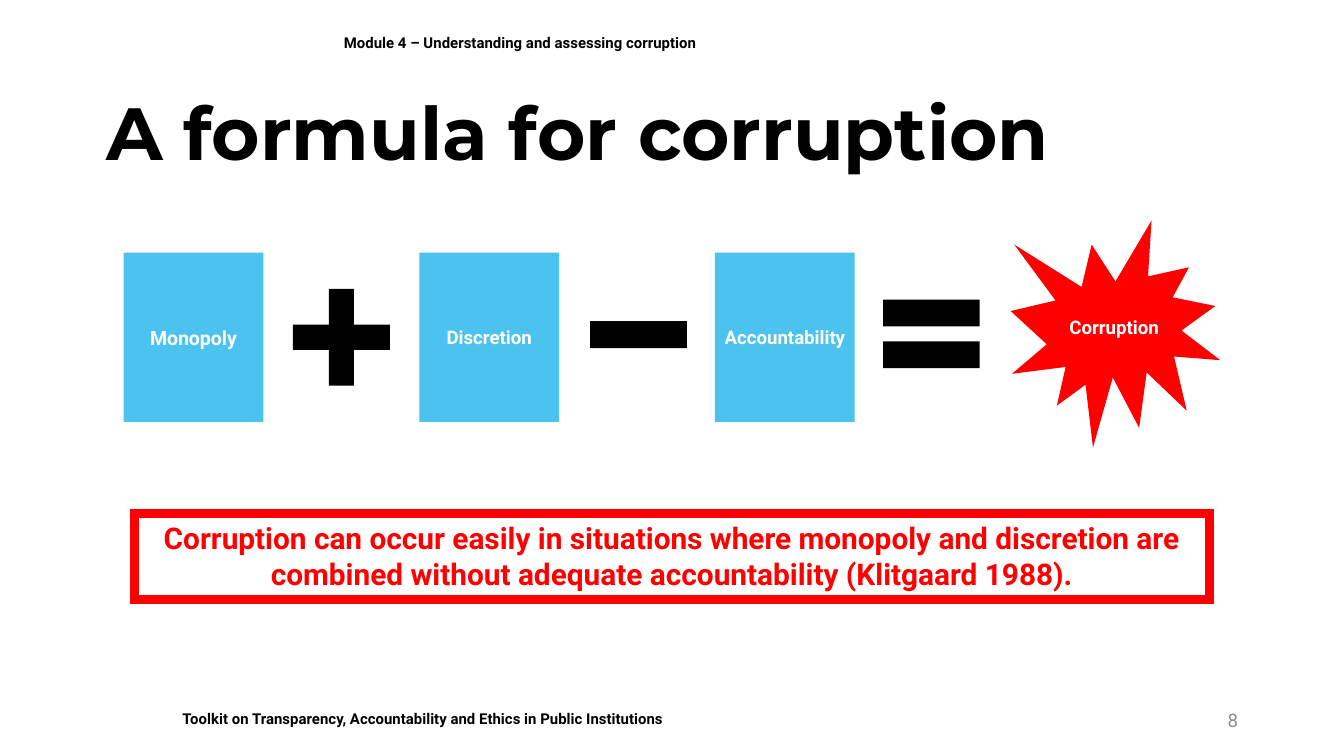
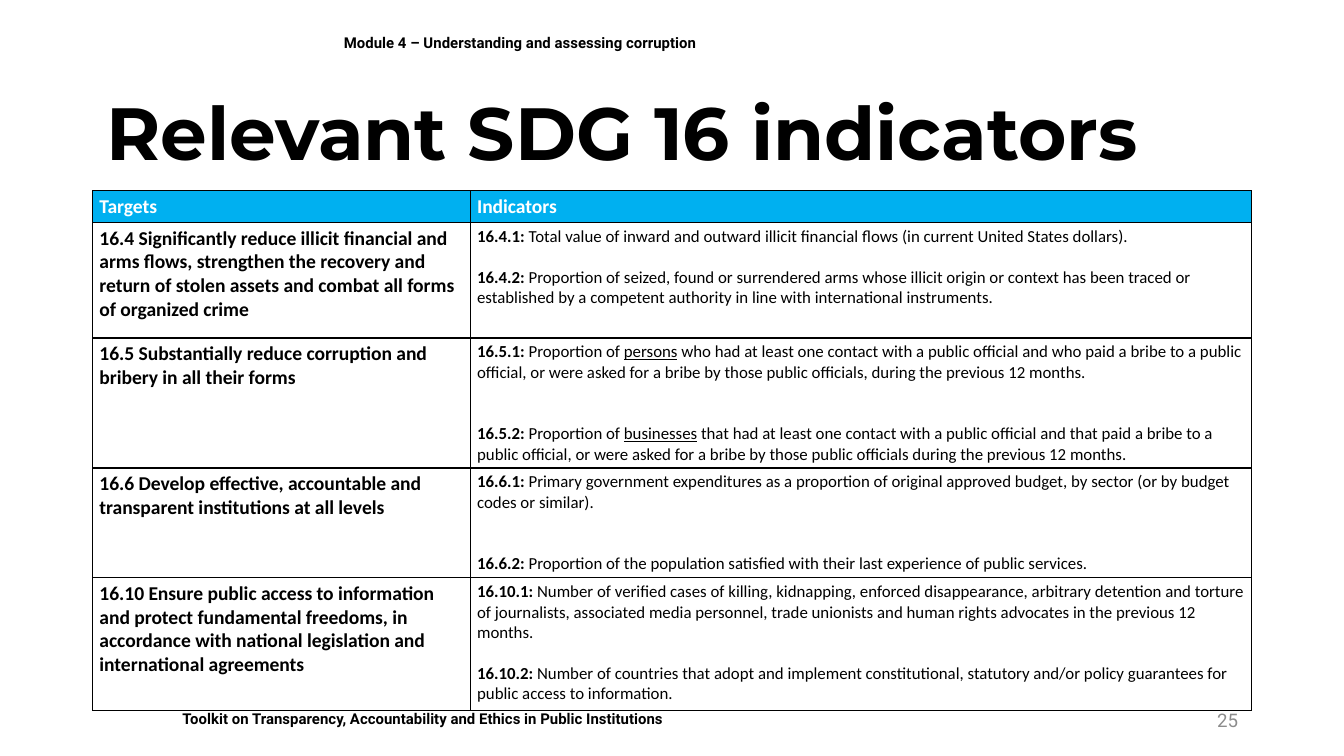
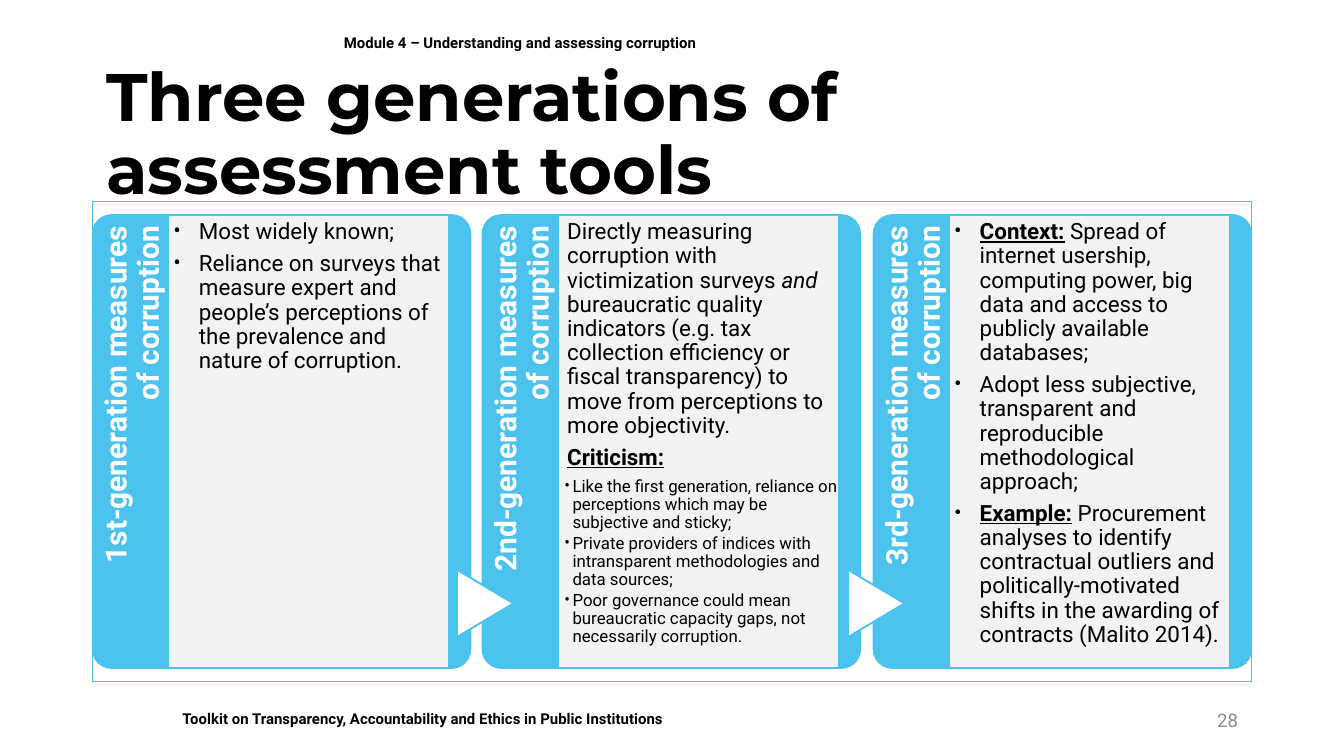
import lxml.etree
import pptx
import pptx.dml.color
import pptx.enum.shapes
import pptx.enum.text
import pptx.oxml.ns
import pptx.util

PX = 9144  # 100 px to the inch
BLUE, RED, BLACK, WHITE = "4CC2EF", "FF0000", "000000", "FFFFFF"
HEADER_BLUE, GREY, PANEL_GREY = "00B0F0", "8C8C8C", "F2F2F2"

rgb = pptx.dml.color.RGBColor.from_string
Pt = pptx.util.Pt
qn = pptx.oxml.ns.qn
SHAPE = pptx.enum.shapes.MSO_SHAPE
ALIGN = pptx.enum.text.PP_ALIGN
ANCHOR = pptx.enum.text.MSO_ANCHOR


def add_box(slide, preset, place, fill=None, line=None, weight=1,
            anchor=ANCHOR.TOP, insets=(10, 5, 10, 5)):
    """Add a preset shape, or a text box when preset is None."""
    place = [length * PX for length in place]
    if preset is None:
        box = slide.shapes.add_textbox(*place)
    else:
        box = slide.shapes.add_shape(preset, *place)
    box.shadow.inherit = False
    if fill:
        box.fill.solid()
        box.fill.fore_color.rgb = rgb(fill)
    else:
        box.fill.background()
    if line:
        box.line.color.rgb = rgb(line)
        box.line.width = Pt(weight)
        outline = box._element.spPr.find(qn("a:ln"))
        lxml.etree.SubElement(outline, qn("a:miter"), lim="800000")
    else:
        box.line.fill.background()
    frame = box.text_frame
    frame.word_wrap = True
    frame.vertical_anchor = anchor
    (frame.margin_left, frame.margin_top,
     frame.margin_right, frame.margin_bottom) = [inset * PX for inset in insets]
    return box


def write(paragraph, text, size, colour=BLACK, bold=False, font="Roboto", align=ALIGN.LEFT):
    """Write a string, or a list of (text, style) runs with style letters b, i, u."""
    paragraph.alignment = align
    paragraph.font.name = font
    paragraph.font.size = Pt(size)
    paragraph.font.bold = bold
    paragraph.font.color.rgb = rgb(colour)
    for words, style in [(text, "")] if isinstance(text, str) else text:
        run = paragraph.add_run()
        run.text = words
        if "b" in style:
            run.font.bold = True
        if "i" in style:
            run.font.italic = True
        if "u" in style:
            run.font.underline = True


deck = pptx.Presentation()
deck.slide_width = 1000 * PX
deck.slide_height = deck.slide_width * 9 // 16

# Shared parts: footer, module line, page number, title
slides = []
for title_text, title_size, page in [
    ("A formula for corruption", 39.6, "8"),
    ("Relevant SDG 16 indicators", 39.6, "25"),
    ("Three generations of assessment tools", 36, "28"),
]:
    slide = deck.slides.add_slide(deck.slide_layouts[5])
    slides.append(slide)
    footer = add_box(slide, SHAPE.RECTANGLE, (126, 523, 717, 24), WHITE)
    write(footer.text_frame.paragraphs[0],
          "Toolkit on Transparency, Accountability and Ethics in Public Institutions", 8, bold=True)
    module = add_box(slide, None, (246, 10, 685, 44), anchor=ANCHOR.MIDDLE)
    write(module.text_frame.paragraphs[0],
          "Module 4 – Understanding and assessing corruption", 8, bold=True)
    number = add_box(slide, None, (706, 521, 225, 30), anchor=ANCHOR.MIDDLE)
    write(number.text_frame.paragraphs[0], page, 10, GREY, align=ALIGN.RIGHT)

    title = slide.shapes.title
    title.left, title.top, title.width, title.height = 69 * PX, 64 * PX, 862 * PX, 75 * PX
    title.text_frame.auto_size = pptx.enum.text.MSO_AUTO_SIZE.NONE
    title.text_frame.vertical_anchor = ANCHOR.MIDDLE
    heading = title.text_frame.paragraphs[0]
    heading.line_spacing = 0.9
    write(heading, title_text, title_size, bold=True, font="Montserrat")

formula_slide, indicator_slide, generation_slide = slides

# Formula: operators
plus = add_box(formula_slide, SHAPE.CROSS, (218, 215, 72, 72), BLACK)
plus.adjustments[0] = 0.37
for bar_left, bar_top in [(439, 239), (657, 223), (657, 254)]:
    add_box(formula_slide, SHAPE.RECTANGLE, (bar_left, bar_top, 72, 20), BLACK)

# Formula: terms and result
terms = [
    (SHAPE.RECTANGLE, (92 + 220 * i, 188, 104, 126), BLUE, word, size)
    for i, (word, size) in enumerate([("Monopoly", 10.5), ("Discretion", 10), ("Accountability", 10)])
]
terms.append((SHAPE.EXPLOSION1, (752, 164, 156, 169), RED, "Corruption", 10))
for preset, place, colour, word, size in terms:
    term = add_box(formula_slide, preset, place, colour, anchor=ANCHOR.MIDDLE, insets=(4, 4, 4, 4))
    write(term.text_frame.paragraphs[0], word, size, WHITE, bold=True, align=ALIGN.CENTER)

# Formula: conclusion
conclusion = add_box(formula_slide, SHAPE.RECTANGLE, (100, 382, 800, 64), WHITE, RED, 4.5)
write(conclusion.text_frame.paragraphs[0],
      "Corruption can occur easily in situations where monopoly and discretion are combined "
      "without adequate accountability (Klitgaard 1988).", 16, RED, bold=True, align=ALIGN.CENTER)

# Indicators: target, gap between its indicators in points, indicators
targets = [
    ("16.4 Significantly reduce illicit financial and arms flows, strengthen the recovery and "
     "return of stolen assets and combat all forms of organized crime", 11, [
         [("16.4.1: ", "b"),
          ("Total value of inward and outward illicit financial flows "
           "(in current United States dollars).", "")],
         [("16.4.2: ", "b"),
          ("Proportion of seized, found or surrendered arms whose illicit origin or context has been "
           "traced or established by a competent authority in line with international instruments.", "")],
     ]),
    ("16.5 Substantially reduce corruption and bribery in all their forms", 22, [
        [("16.5.1: ", "b"), ("Proportion of ", ""), ("persons", "u"),
         (" who had at least one contact with a public official and who paid a bribe to a public "
          "official, or were asked for a bribe by those public officials, during the previous "
          "12 months.", "")],
        [("16.5.2: ", "b"), ("Proportion of ", ""), ("businesses", "u"),
         (" that had at least one contact with a public official and that paid a bribe to a public "
          "official, or were asked for a bribe by those public officials during the previous "
          "12 months.", "")],
    ]),
    ("16.6 Develop effective, accountable and transparent institutions at all levels", 22, [
        [("16.6.1: ", "b"),
         ("Primary government expenditures as a proportion of original approved budget, by sector "
          "(or by budget codes or similar).", "")],
        [("16.6.2: ", "b"),
         ("Proportion of the population satisfied with their last experience of public services.", "")],
    ]),
    ("16.10 Ensure public access to information and protect fundamental freedoms, in accordance "
     "with national legislation and international agreements", 11, [
         [("16.10.1: ", "b"),
          ("Number of verified cases of killing, kidnapping, enforced disappearance, arbitrary "
           "detention and torture of journalists, associated media personnel, trade unionists and "
           "human rights advocates in the previous 12 months.", "")],
         [("16.10.2: ", "b"),
          ("Number of countries that adopt and implement constitutional, statutory and/or policy "
           "guarantees for public access to information.", "")],
     ]),
]
table = indicator_slide.shapes.add_table(5, 2, 69 * PX, 142 * PX, 862 * PX, 344 * PX).table
table.horz_banding = False
for column, width in zip(table.columns, [281, 581]):
    column.width = width * PX
for row, height in zip(table.rows, [23, 86, 75, 61, 99]):
    row.height = height * PX

# Indicators: cell margins, fills and borders
for r, row in enumerate(table.rows):
    for cell in row.cells:
        cell.margin_left = cell.margin_right = 5 * PX
        cell.margin_top = cell.margin_bottom = 3 * PX
        if r == 0:
            cell.fill.solid()
            cell.fill.fore_color.rgb = rgb(HEADER_BLUE)
        else:
            cell.fill.background()
        properties = cell._tc.get_or_add_tcPr()
        for position, side in enumerate(["a:lnL", "a:lnR", "a:lnT", "a:lnB"]):
            border = lxml.etree.Element(qn(side), w=str(Pt(0.75)))
            border_fill = lxml.etree.SubElement(border, qn("a:solidFill"))
            lxml.etree.SubElement(border_fill, qn("a:srgbClr"), val=BLACK)
            properties.insert(position, border)

# Indicators: cell text
for c, label in enumerate(["Targets", "Indicators"]):
    write(table.cell(0, c).text_frame.paragraphs[0], label, 10.5, WHITE, bold=True, font="Calibri")
for r, (target, gap, indicators) in enumerate(targets, start=1):
    write(table.cell(r, 0).text_frame.paragraphs[0], target, 10.5, bold=True, font="Calibri")
    frame = table.cell(r, 1).text_frame
    for i, indicator in enumerate(indicators):
        paragraph = frame.add_paragraph() if i else frame.paragraphs[0]
        if i:
            paragraph.space_before = Pt(gap)
        write(paragraph, indicator, 9, font="Calibri")

# Generations: paragraph kinds as level, margin, indent, bullet, size, space after
POINT = (0, 23, -19, True, 12, 4.2)
PLAIN = (0, 7, 0, False, 12, 4.2)
SMALL = (1, 11, -6, True, 9, 1.3)
generations = [
    ("1st", [
        (POINT, "Most widely known;"),
        (POINT, "Reliance on surveys that measure expert and people’s perceptions of the prevalence "
                "and nature of corruption."),
    ]),
    ("2nd", [
        (PLAIN, [("Directly measuring corruption with victimization surveys ", ""), ("and", "i"),
                 (" bureaucratic quality indicators (e.g. tax collection efficiency or fiscal "
                  "transparency) to move from perceptions to more objectivity.", "")]),
        (PLAIN, [("Criticism:", "bu")]),
        (SMALL, "Like the first generation, reliance on perceptions which may be subjective and sticky;"),
        (SMALL, "Private providers of indices with intransparent methodologies and data sources;"),
        (SMALL, "Poor governance could mean bureaucratic capacity gaps, not necessarily corruption."),
    ]),
    ("3rd", [
        (POINT, [("Context:", "bu"),
                 (" Spread of internet usership, computing power, big data and access to publicly "
                  "available databases;", "")]),
        (POINT, "Adopt less subjective, transparent and reproducible methodological approach;"),
        (POINT, [("Example:", "bu"),
                 (" Procurement analyses to identify contractual outliers and politically-motivated "
                  "shifts in the awarding of contracts (Malito 2014).", "")]),
    ]),
]
add_box(generation_slide, SHAPE.RECTANGLE, (69, 150, 862, 357), line=BLUE, weight=0.75)
for i, (ordinal, points) in enumerate(generations):
    offset = i * 581 // 2

    # Band with the sideways heading
    band = add_box(generation_slide, SHAPE.ROUNDED_RECTANGLE, (41 + offset, 188, 337, 281),
                   BLUE, BLUE, insets=(57, 2, 4, 221))
    band.adjustments[0] = 0.05
    band.rotation = 270
    heading = band.text_frame.paragraphs[0]
    heading.line_spacing = 0.9
    write(heading, f"{ordinal}-generation measures of corruption", 16, WHITE, bold=True,
          align=ALIGN.RIGHT)

    # Arrow from the band before
    if i:
        arrow = add_box(generation_slide, SHAPE.FLOWCHART_EXTRACT,
                        (46 + offset, 428, 50, 42), WHITE, BLUE)
        arrow.rotation = 90

    # Panel with the points
    panel = add_box(generation_slide, SHAPE.RECTANGLE, (125 + offset, 160, 209, 337),
                    PANEL_GREY, BLUE, insets=(0, 4, 0, 0))
    for p, ((level, margin, indent, bullet, size, after), text) in enumerate(points):
        frame = panel.text_frame
        paragraph = frame.add_paragraph() if p else frame.paragraphs[0]
        paragraph.level = level
        paragraph.line_spacing = 0.9
        paragraph.space_after = Pt(after)
        properties = paragraph._p.get_or_add_pPr()
        properties.set("marL", str(margin * PX))
        properties.set("indent", str(indent * PX))
        if bullet:
            lxml.etree.SubElement(properties, qn("a:buFont"), typeface="Roboto")
            lxml.etree.SubElement(properties, qn("a:buChar"), char="•")
        write(paragraph, text, size)

deck.save("out.pptx")
